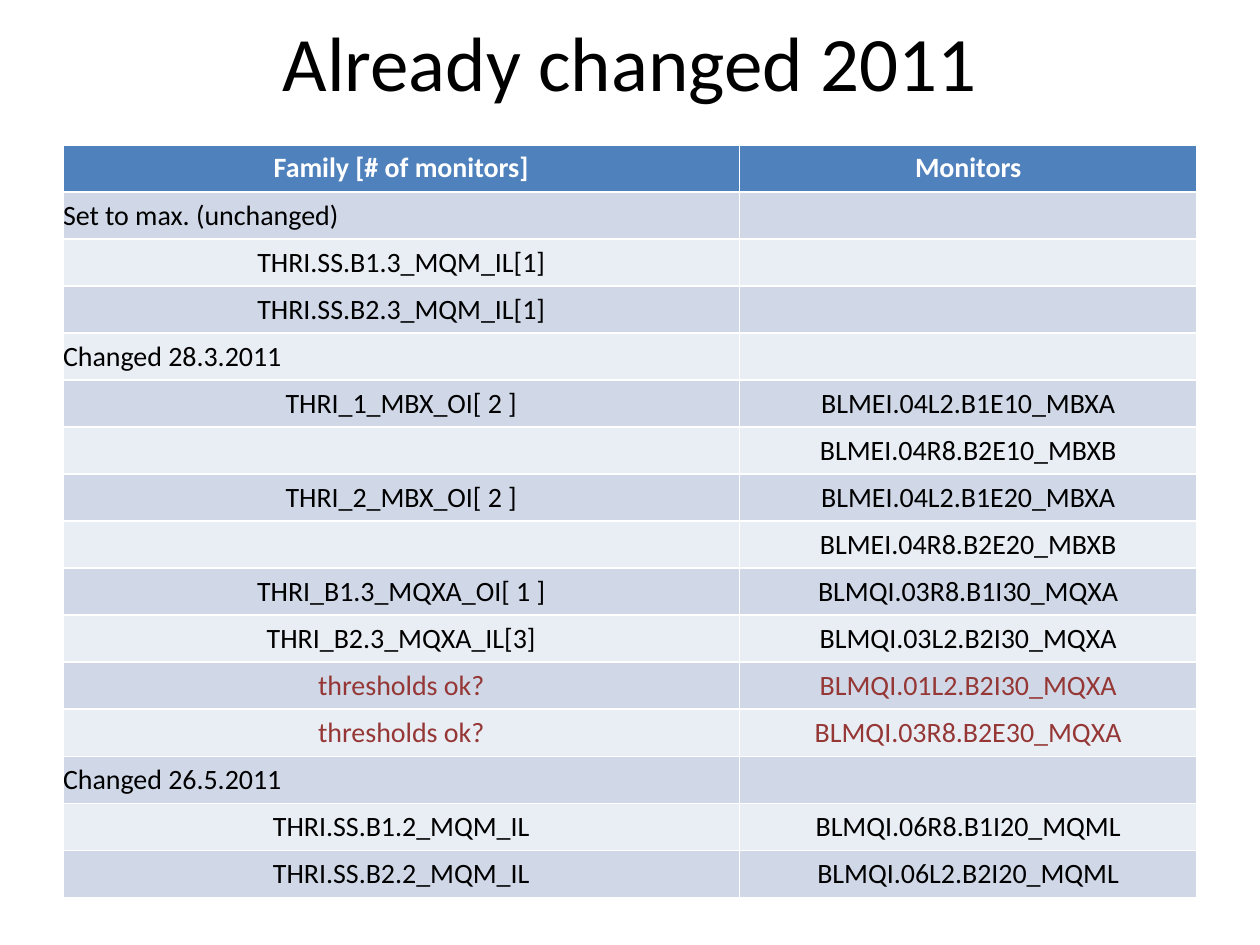
"""Build the slide that lists the monitor families already changed in 2011."""
from dataclasses import dataclass

from pptx import Presentation
from pptx import util as u
from pptx.dml.color import RGBColor
from pptx.enum import text

FONT = "Calibri"
BLACK, WHITE, RED = "000000", "FFFFFF", "953735"
HEADER_FILL = "4F81BD"
BAND_FILLS = ("E9EDF4", "D0D8E8")
ROW_HEIGHT = 26.9
COLUMN_WIDTHS = (386.6, 261.4)


@dataclass(frozen=True)
class Row:
    """Describe one table row."""

    family: str
    monitor: str = ""
    color: str = BLACK
    heading: bool = False


ROWS = (
    Row("Family [# of monitors]", "Monitors", WHITE),
    Row("Set to max. (unchanged)", heading=True),
    Row("THRI.SS.B1.3_MQM_IL[1]"),
    Row("THRI.SS.B2.3_MQM_IL[1]"),
    Row("Changed 28.3.2011", heading=True),
    Row("THRI_1_MBX_OI[ 2 ]", "BLMEI.04L2.B1E10_MBXA"),
    Row("", "BLMEI.04R8.B2E10_MBXB"),
    Row("THRI_2_MBX_OI[ 2 ]", "BLMEI.04L2.B1E20_MBXA"),
    Row("", "BLMEI.04R8.B2E20_MBXB"),
    Row("THRI_B1.3_MQXA_OI[ 1 ]", "BLMQI.03R8.B1I30_MQXA"),
    Row("THRI_B2.3_MQXA_IL[3]", "BLMQI.03L2.B2I30_MQXA"),
    Row("thresholds ok?", "BLMQI.01L2.B2I30_MQXA", RED),
    Row("thresholds ok?", "BLMQI.03R8.B2E30_MQXA", RED),
    Row("Changed 26.5.2011", heading=True),
    Row("THRI.SS.B1.2_MQM_IL", "BLMQI.06R8.B1I20_MQML"),
    Row("THRI.SS.B2.2_MQM_IL", "BLMQI.06L2.B2I20_MQML"),
)


def paint(target, color: str) -> None:
    """Give a fill or a font a solid colour."""
    if hasattr(target, "solid"):
        target.solid()
        target.fore_color.rgb = RGBColor.from_string(color)
    else:
        target.color.rgb = RGBColor.from_string(color)


def write(para, words: str, size: float, color: str, bold: bool = False, centered: bool = True) -> None:
    """Add one styled run to an aligned paragraph."""
    para.alignment = text.PP_ALIGN.CENTER if centered else text.PP_ALIGN.LEFT
    span = para.add_run()
    span.text = words
    span.font.name, span.font.size, span.font.bold = FONT, u.Pt(size), bold
    paint(span.font, color)


def draw_title(page, words: str) -> None:
    """Draw the centred slide title."""
    box = page.shapes.add_textbox(u.Pt(36), u.Pt(3.6), u.Pt(648), u.Pt(62.64))
    frame = box.text_frame
    frame.word_wrap = True
    frame.vertical_anchor = text.MSO_ANCHOR.MIDDLE
    write(frame.paragraphs[0], words, 44, BLACK)


def draw_table(page, rows: tuple[Row, ...]) -> None:
    """Draw the banded table of families and monitors."""
    table = page.shapes.add_table(
        len(rows), len(COLUMN_WIDTHS), u.Pt(36), u.Pt(82.8),
        u.Pt(sum(COLUMN_WIDTHS)), u.Pt(ROW_HEIGHT * len(rows)),
    ).table
    for column, width in zip(table.columns, COLUMN_WIDTHS):
        column.width = u.Pt(width)
    for index, row in enumerate(rows):
        table.rows[index].height = u.Pt(ROW_HEIGHT)
        is_header = index == 0
        for cell, words in zip(table.rows[index].cells, (row.family, row.monitor)):
            paint(cell.fill, HEADER_FILL if is_header else BAND_FILLS[index % 2])
            cell.margin_left = cell.margin_right = u.Pt(0)
            cell.margin_top = cell.margin_bottom = u.Pt(0)
            cell.vertical_anchor = text.MSO_ANCHOR.MIDDLE
            if words:
                write(cell.text_frame.paragraphs[0], words, 16, row.color, is_header, not row.heading)


def main() -> None:
    """Build and save the deck."""
    deck = Presentation()
    deck.slide_width, deck.slide_height = u.Pt(720), u.Pt(540)
    page = deck.slides.add_slide(deck.slide_layouts[6])
    draw_title(page, "Already changed 2011")
    draw_table(page, ROWS)
    deck.save("out.pptx")


if __name__ == "__main__":
    main()
